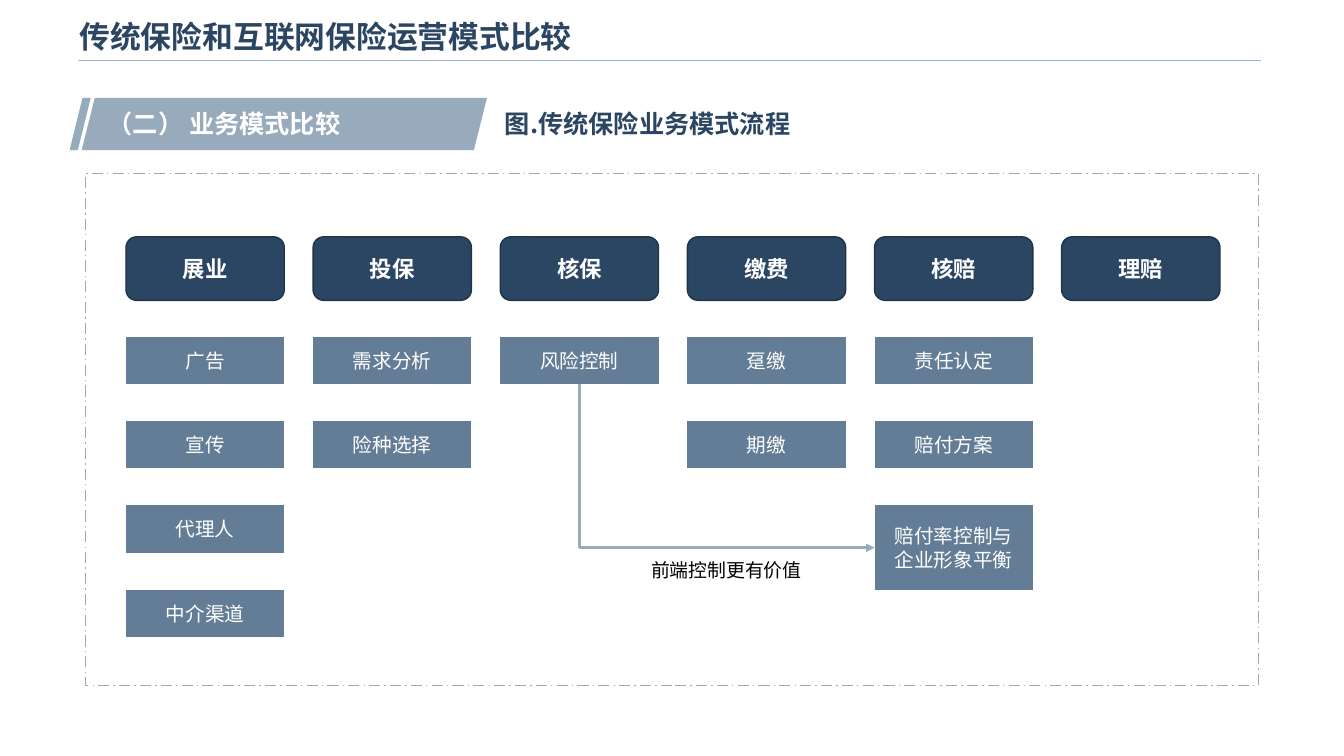
from dataclasses import dataclass

from lxml.etree import SubElement
from pptx import Presentation
from pptx.dml.color import RGBColor
from pptx.enum.dml import MSO_LINE
from pptx.enum.shapes import MSO_CONNECTOR, MSO_SHAPE
from pptx.enum.text import MSO_ANCHOR, PP_ALIGN
from pptx.oxml.ns import qn
from pptx.util import Inches, Pt

TITLE = "传统保险和互联网保险运营模式比较"
SECTION = "（二） 业务模式比较"
CAPTION = "图.传统保险业务模式流程"
ARROW_NOTE = "前端控制更有价值"
STAGES = [
    ("展业", ["广告", "宣传", "代理人", "中介渠道"]),
    ("投保", ["需求分析", "险种选择"]),
    ("核保", ["风险控制"]),
    ("缴费", ["趸缴", "期缴"]),
    ("核赔", ["责任认定", "赔付方案", "赔付率控制与\n企业形象平衡"]),
    ("理赔", []),
]


@dataclass(frozen=True)
class Theme:
    navy: str = "2B4663"
    navy_edge: str = "203449"
    slate: str = "647D96"
    mist: str = "97ABBD"
    accent: str = "94ACBC"
    rule: str = "98B4D2"
    white: str = "FFFFFF"
    black: str = "000000"
    font: str = "Arial"
    heading_font: str = "Noto Sans CJK SC"
    title_size: float = 22
    heading_size: float = 18
    stage_size: float = 16
    step_size: float = 14
    note_size: float = 13.5


T = Theme()

LEFT, TOP = 1.25, 2.35
BOX_W, STAGE_H, STEP_H, TALL_H = 1.57, 0.63, 0.47, 0.84
COL_PITCH = (10.53 - LEFT) / 5
STEP_TOP = 3.34
ROW_PITCH = (5.85 - STEP_TOP) / 3


def rgb(value):
    return RGBColor.from_string(value)


def write(sp, text, size, color, font=T.font, bold=False, align=None, anchor=MSO_ANCHOR.TOP, wrap=True):
    tf = sp.text_frame
    tf.word_wrap = wrap
    tf.vertical_anchor = anchor
    tf.text = text
    for p in tf.paragraphs:
        p.alignment = align
        p.font.name = font
        p.font.size = Pt(size)
        p.font.bold = bold
        p.font.color.rgb = rgb(color)


def add_text(s, box, text, size, color, **style):
    write(s.shapes.add_textbox(*map(Inches, box)), text, size, color, **style)


def add_box(s, kind, box, fill=None, line=None):
    sp = s.shapes.add_shape(kind, *map(Inches, box))
    sp.shadow.inherit = False
    if fill:
        sp.fill.solid()
        sp.fill.fore_color.rgb = rgb(fill)
    else:
        sp.fill.background()
    if line:
        sp.line.color.rgb = rgb(line)
        sp.line.width = Pt(1)
    else:
        sp.line.fill.background()
    return sp


def add_line(s, kind, ends, color, width):
    cx = s.shapes.add_connector(kind, *map(Inches, ends))
    cx.line.color.rgb = rgb(color)
    cx.line.width = Pt(width)
    SubElement(cx._element.spPr, qn("a:effectLst"))
    return cx


def add_header(s):
    add_line(s, MSO_CONNECTOR.STRAIGHT, (0.77, 0.6, 12.51, 0.6), T.rule, 1)
    add_text(s, (0.69, 0.09, 10.71, 0.53), TITLE, T.title_size, T.navy, bold=True, anchor=MSO_ANCHOR.MIDDLE)
    for left, width, slant, fill in [(0.69, 0.21, 0.61, T.accent), (0.81, 4.02, 0.25, T.mist)]:
        sp = add_box(s, MSO_SHAPE.PARALLELOGRAM, (left, 0.97, width, 0.52), fill)
        sp.adjustments[0] = slant
    for left, width, text, color in [(0.97, 3.41, SECTION, T.white), (4.91, 3.36, CAPTION, T.navy)]:
        add_text(s, (left, 1.03, width, 0.4), text, T.heading_size, color, font=T.heading_font, bold=True)


def add_stages(s):
    steps = {}
    centred = {"align": PP_ALIGN.CENTER, "anchor": MSO_ANCHOR.MIDDLE}
    for col, (stage, names) in enumerate(STAGES):
        x = LEFT + col * COL_PITCH
        sp = add_box(s, MSO_SHAPE.ROUNDED_RECTANGLE, (x, TOP, BOX_W, STAGE_H), T.navy, T.navy_edge)
        write(sp, stage, T.stage_size, T.white, bold=True, **centred)
        for row, name in enumerate(names):
            height = TALL_H if "\n" in name else STEP_H
            box = (x, STEP_TOP + row * ROW_PITCH, BOX_W, height)
            sp = add_box(s, MSO_SHAPE.FLOWCHART_PROCESS, box, T.slate)
            write(sp, name, T.step_size, T.white, **centred)
            steps[col, row] = sp
    return steps


def add_elbow(s, start, end):
    cx = add_line(s, MSO_CONNECTOR.ELBOW, (0, 0, 1, 1), T.mist, 2)
    cx.begin_connect(start, 2)
    cx.end_connect(end, 1)
    x1, y1 = start.left + start.width // 2, start.top + start.height
    x2, y2 = end.left, end.top + end.height // 2
    across, down = x2 - x1, y2 - y1
    cx.left = (x1 + x2 - down) // 2
    cx.top = (y1 + y2 - across) // 2
    cx.width, cx.height = down, across
    spPr = cx._element.spPr
    xfrm = spPr.find(qn("a:xfrm"))
    for flip in ("flipH", "flipV"):
        xfrm.attrib.pop(flip, None)
    xfrm.set("rot", "5400000")
    xfrm.set("flipV", "1")
    spPr.find(qn("a:prstGeom")).set("prst", "bentConnector2")
    SubElement(spPr.find(qn("a:ln")), qn("a:tailEnd"), type="triangle")


def main():
    prs = Presentation()
    prs.slide_width, prs.slide_height = Inches(13.33), Inches(7.5)
    s = prs.slides.add_slide(prs.slide_layouts[6])
    add_header(s)
    frame = add_box(s, MSO_SHAPE.RECTANGLE, (0.85, 1.72, 11.63, 5.08), line=T.mist)
    frame.line.dash_style = MSO_LINE.LONG_DASH_DOT
    steps = add_stages(s)
    add_elbow(s, steps[2, 0], steps[4, 2])
    add_text(s, (6.36, 5.49, 1.7, 0.33), ARROW_NOTE, T.note_size, T.black, wrap=False)
    prs.save("out.pptx")


if __name__ == "__main__":
    main()
